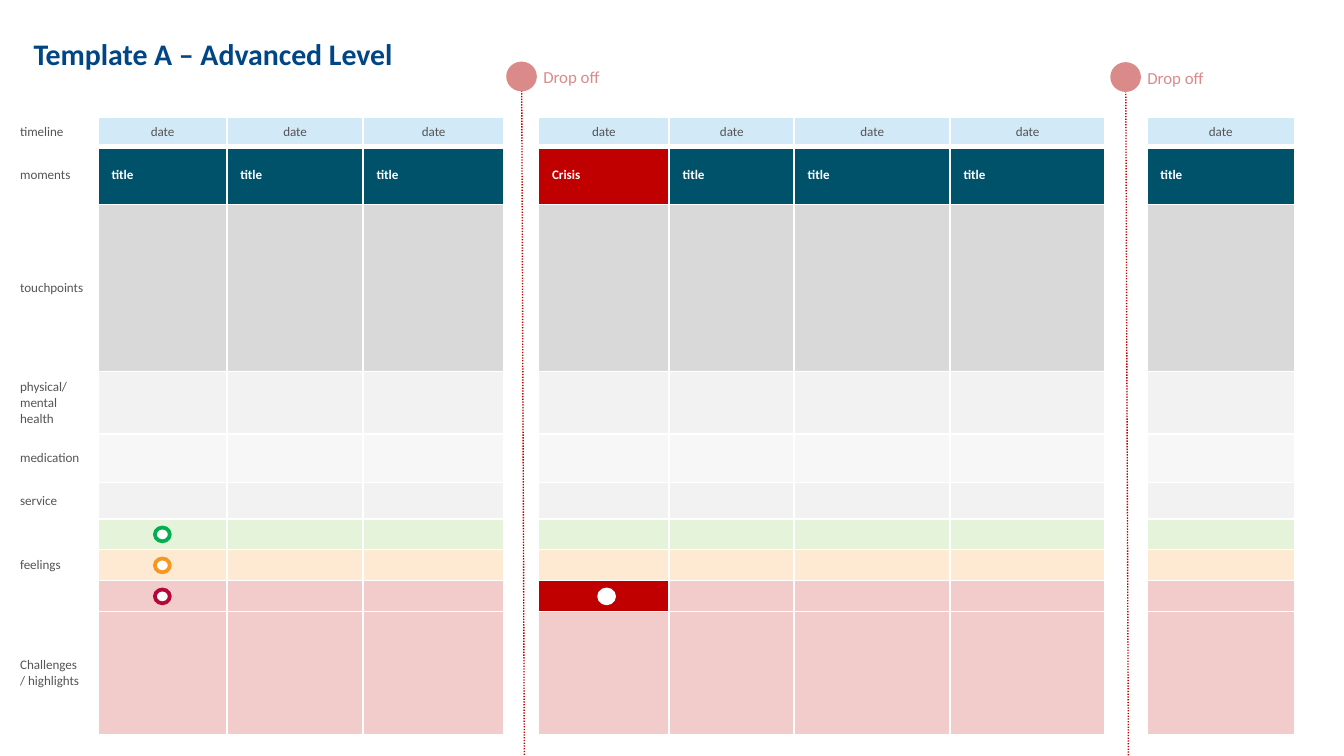
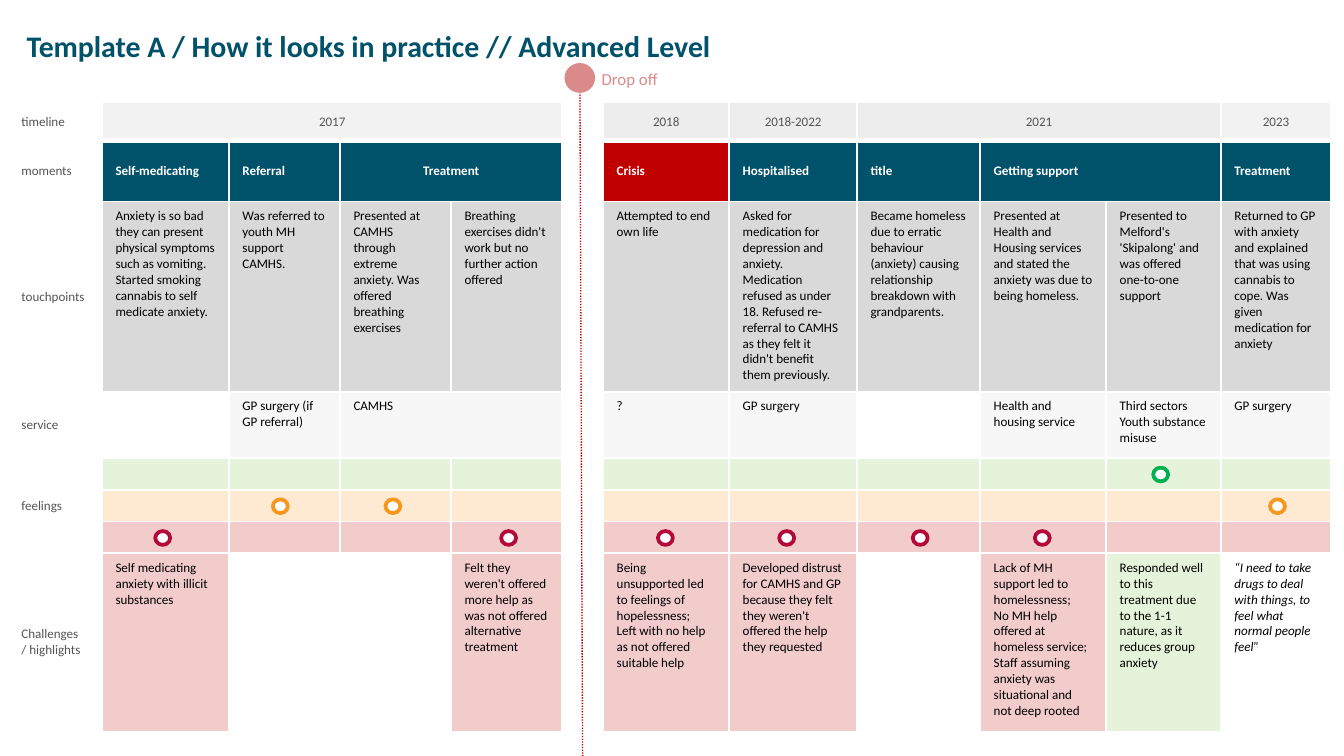
from lxml import etree
from pptx import Presentation
from pptx.dml.color import RGBColor as RGB
from pptx.enum import dml, shapes, text
from pptx.oxml import ns
from pptx.util import Pt

WHITE = RGB(0xFF, 0xFF, 0xFF)
BLACK = RGB(0, 0, 0)
GREY = RGB(0x56, 0x54, 0x56)
NAVY = RGB(0x00, 0x46, 0x85)
TEAL = RGB(0x00, 0x51, 0x6A)
SKY = RGB(0xD2, 0xE9, 0xF7)
CRISIS = RGB(0xC0, 0, 0)
STONE = RGB(0xD9, 0xD9, 0xD9)
ASH = RGB(0xED, 0xED, 0xED)
MIST = RGB(0xF2, 0xF2, 0xF2)
PALE = RGB(0xF7, 0xF7, 0xF7)
MINT = RGB(0xE4, 0xF3, 0xD9)
PEACH = RGB(0xFE, 0xEA, 0xD2)
ROSE = RGB(0xF2, 0xCB, 0xCB)
CORAL = RGB(0xDB, 0x8A, 0x8A)
GREEN = RGB(0, 0xB0, 0x50)
AMBER = RGB(0xF8, 0x97, 0x1D)
RED = RGB(0xB3, 0x08, 0x38)

FACE = "Calibri"
WIDE, HIGH = 720, 405
LEFT, MID = text.PP_ALIGN.LEFT, text.PP_ALIGN.CENTER
TOP, HALF = text.MSO_ANCHOR.TOP, text.MSO_ANCHOR.MIDDLE

# Looks of table cells
LABEL = {"color": GREY, "bold": False, "align": LEFT, "anchor": HALF}
DATE = {**LABEL, "align": MID}
HEAD = {**LABEL, "color": WHITE, "bold": True}
NOTE = {**LABEL, "color": BLACK, "anchor": TOP}

END = "Challenges\n/ highlights"


def style(frame, size, color, align=LEFT, **marks):
    """Format every paragraph and run of a text frame."""
    for par in frame.paragraphs:
        par.alignment = align
        for run in par.runs:
            run.font.color.rgb = color
            for key, val in {"name": FACE, "size": Pt(size), **marks}.items():
                setattr(run.font, key, val)
        if not par.runs:
            par._p.get_or_add_endParaRPr().set("sz", str(size * 100))


def label(tree, words, box, size, color, inset=None, **marks):
    frame = tree.add_textbox(*map(Pt, box)).text_frame
    frame.word_wrap = True
    if inset is not None:
        for side in ("left", "top", "right", "bottom"):
            setattr(frame, "margin_" + side, Pt(inset))
        frame.vertical_anchor = HALF
    frame.text = words
    style(frame, size, color, **marks)


def title(slide, words, box, color):
    label(slide.shapes, words, box, 16, color, inset=0, bold=True)


def disc(tree, x, y, w, h, fill, edge=None):
    oval = tree.add_shape(shapes.MSO_SHAPE.OVAL, *map(Pt, (x, y, w, h)))
    oval.shadow.inherit = False
    oval.fill.solid()
    oval.fill.fore_color.rgb = fill
    if edge is None:
        oval.line.fill.background()
    else:
        oval.line.color.rgb = edge
        oval.line.width = Pt(2)


def drop(slide, x, y):
    """Drop-off marker: a dotted line down the slide, a disc and its name."""
    tree = slide.shapes.add_group_shape().shapes
    ends = (x + 8.3, y + 14, x + 9.7, HIGH)
    line = tree.add_connector(shapes.MSO_CONNECTOR.STRAIGHT, *map(Pt, ends))
    line.line.color.rgb = CRISIS
    line.line.width = Pt(0.75)
    line.line.dash_style = dml.MSO_LINE.ROUND_DOT
    etree.SubElement(line._element.spPr, ns.qn("a:effectLst"))
    disc(tree, x, y, 16.4, 16, CORAL)
    label(tree, "Drop off", (x + 12.8, y - 0.8, 52.5, 18), 9, CORAL)


def edge(cell, base):
    """White cell borders; base is the width of the lower one."""
    props = cell._tc.get_or_add_tcPr()
    for spot, (side, width) in enumerate(zip("LRTB", (1, 1, 1, base))):
        line = etree.Element(ns.qn("a:ln" + side), w=str(Pt(width)))
        fill = etree.SubElement(line, ns.qn("a:solidFill"))
        etree.SubElement(fill, ns.qn("a:srgbClr"), val=str(WHITE))
        props.insert(spot, line)


def fill_cell(cell, words, hue, look, base):
    look = dict(look)
    cell.text = words
    cell.vertical_anchor = look.pop("anchor")
    style(cell.text_frame, 7, **look)
    if hue is None:
        cell.fill.background()
    else:
        cell.fill.solid()
        cell.fill.fore_color.rgb = hue
    edge(cell, base)


def board(slide, x, y, cols, rows, gaps, odd, spans):
    """Draw the journey table.

    rows: (label, height, hue, look, words of the columns that are not gaps)
    odd: {(row, column): (hue, changes of look)}; spans: corners to merge
    """
    size = (sum(cols), sum(row[1] for row in rows))
    grid = slide.shapes.add_table(
        len(rows), len(cols), *map(Pt, (x, y, *size))).table
    grid.first_row = grid.horz_banding = False
    for col, width in zip(grid.columns, cols):
        col.width = Pt(width)
    for r, (name, height, hue, look, words) in enumerate(rows):
        grid.rows[r].height = Pt(height)
        base = 1 if r else 3
        fill_cell(grid.cell(r, 0), name, WHITE, LABEL, base)
        queue = iter(words)
        for c in range(1, len(cols)):
            cell = grid.cell(r, c)
            if c in gaps:
                fill_cell(cell, "", None, look, base)
            else:
                tint, more = odd.get((r, c), (hue, {}))
                fill_cell(cell, next(queue, ""), tint, {**look, **more}, base)
    for r, c, down, over in spans:
        grid.cell(r, c).merge(grid.cell(down, over))


def rings(slide, top, step, marks):
    """Feeling marks: (centre x, level from 0 good to 2 bad, colour)."""
    for x, level, color in marks:
        y = top + step * (level + 0.5)
        disc(slide.shapes, x - 4, y - 3.7, 8, 7.4, WHITE, color)


def blank(slide):
    """The empty template."""
    title(slide, "Template A – Advanced Level", (18, 13.7, 549, 29.5), NAVY)
    step = 16.6
    rows = [
        ("timeline", 15.8, SKY, DATE, ["date"] * 8),
        ("moments", 31, TEAL, HEAD, ["title"] * 3 + ["Crisis"] + ["title"] * 4),
        ("touchpoints", 89.5, STONE, NOTE, []),
        ("physical/ mental health", 33.5, MIST, NOTE, []),
        ("medication", 26, PALE, NOTE, []),
        ("service", 19.4, MIST, NOTE, []),
        ("feelings", step, MINT, NOTE, []),
        ("", step, PEACH, NOTE, []),
        ("", step, ROSE, NOTE, []),
        (END, 66.2, ROSE, NOTE, []),
    ]
    cols = [49, 69, 73, 75.5, 18.5, 70, 67, 83.5, 83, 22.5, 79]
    odd = {(1, 5): (CRISIS, {}), (8, 5): (CRISIS, {})}
    board(slide, 3.6, 62.8, cols, rows, {4, 9}, odd, [(6, 0, 8, 0)])
    rings(slide, 278, step, [
        (87, 2, RED), (87, 0, GREEN), (325, 2, WHITE), (87, 1, AMBER)])
    drop(slide, 594.8, 33.3)
    drop(slide, 271.2, 33)


def filled(slide):
    """The template with a worked example."""
    step = 17
    rows = [
        ("timeline", 20.5, ASH, DATE,
         ["2017", "", "", "", "2018", "2018-2022", "2021", "", "", "2023"]),
        ("moments", 32.5, TEAL, HEAD,
         ["Self-medicating", "Referral", "Treatment", "", "Crisis",
          "Hospitalised", "title", "Getting support", "", "Treatment"]),
        ("touchpoints", 102, STONE, NOTE, [
            "Anxiety is so bad they can present physical symptoms such as "
            "vomiting. Started smoking cannabis to self medicate anxiety.",
            "Was referred to youth MH support CAMHS.",
            "Presented at CAMHS through extreme anxiety. Was offered "
            "breathing exercises",
            "Breathing exercises didn't work but no further action offered",
            "Attempted to end own life",
            "Asked for medication for depression and anxiety. Medication "
            "refused as under 18. Refused re-referral to CAMHS as they felt "
            "it didn't benefit them previously.",
            "Became homeless due to erratic behaviour (anxiety) causing "
            "relationship breakdown with grandparents.",
            "Presented at Health and Housing services and stated the anxiety "
            "was due to being homeless.",
            "Presented to Melford's 'Skipalong' and was offered one-to-one "
            "support",
            "Returned to GP with anxiety and explained that was using "
            "cannabis to cope. Was given medication for anxiety"]),
        ("service", 35.5, PALE, NOTE,
         ["", "GP surgery (if GP referral)", "CAMHS", "", "?", "GP surgery",
          "", "Health and housing service",
          "Third sectors Youth substance misuse", "GP surgery"]),
        ("feelings", step, MINT, NOTE, []),
        ("", step, PEACH, NOTE, []),
        ("", step, ROSE, NOTE, []),
        (END, 95.5, ROSE, NOTE, [
            "Self medicating anxiety with illicit substances", "", "",
            "Felt they weren't offered more help as was not offered "
            "alternative treatment",
            "Being unsupported led to feelings of hopelessness;\n"
            "Left with no help as not offered suitable help",
            "Developed distrust for CAMHS and GP because they felt they "
            "weren't offered the help they requested",
            "",
            "Lack of MH support led to homelessness;\n"
            "No MH help offered at homeless service;\n"
            "Staff assuming anxiety was situational and not deep rooted",
            "Responded well to this treatment due to the 1-1 nature, as it "
            "reduces group anxiety",
            "“I need to take drugs to deal with things, to feel what normal "
            "people feel”"]),
    ]
    cols = [50.4, 68, 59.5, 59.5, 59.5, 22, 67.5, 68.5, 66, 67.5, 61.5, 59]
    bare = [(3, 1), (3, 8), (7, 2), (7, 3), (7, 8)]
    odd = {
        **{spot: (None, {}) for spot in bare},
        (0, 1): (MIST, {}), (0, 11): (MIST, {}),
        (1, 3): (TEAL, {"align": MID}), (1, 6): (CRISIS, {}),
        (7, 10): (MINT, {}), (7, 11): (None, {"italic": True}),
    }
    spans = [(0, 1, 0, 4), (0, 8, 0, 10), (1, 3, 1, 4), (1, 9, 1, 10),
             (3, 3, 3, 4), (4, 0, 6, 0)]
    board(slide, 4.3, 55, cols, rows, {5}, odd, spans)
    bad = [(x, 2, RED) for x in (87.2, 272.5, 356.5, 421.5, 493, 558.4)]
    fair = [(x, 1, AMBER) for x in (150.2, 210.5, 684.4)]
    rings(slide, 245.7, step, bad + fair + [(621.8, 0, GREEN)])
    title(slide, "Template A / How it looks in practice // Advanced Level",
          (14.3, 9.4, 618, 29.5), TEAL)
    drop(slide, 302.4, 33.8)


def main():
    deck = Presentation()
    deck.slide_width, deck.slide_height = Pt(WIDE), Pt(HIGH)
    for draw in (blank, filled):
        draw(deck.slides.add_slide(deck.slide_layouts[6]))
    deck.save("out.pptx")


if __name__ == "__main__":
    main()
